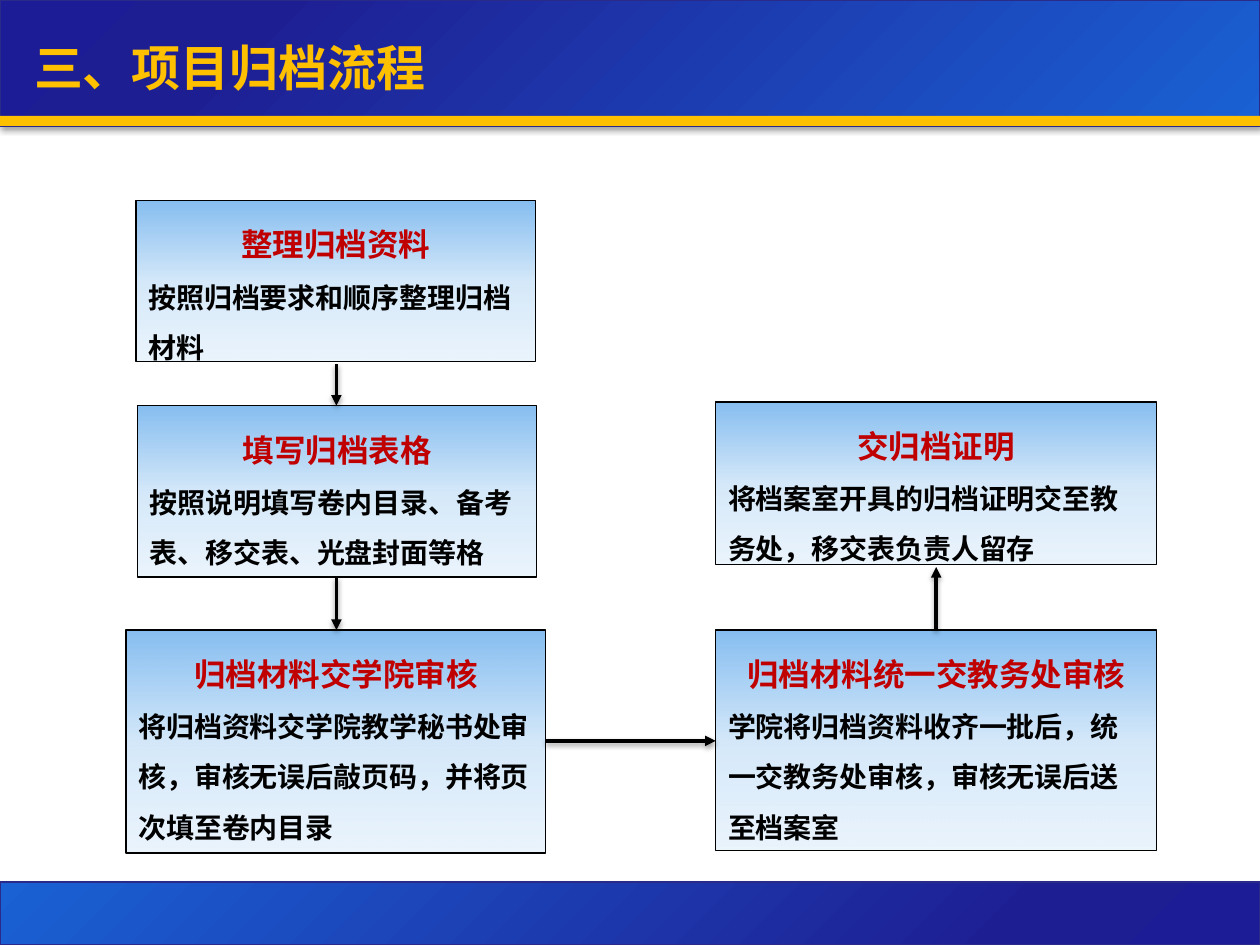
import pptx
import pptx.dml.color
import pptx.enum.shapes
import pptx.enum.text
import pptx.oxml
import pptx.oxml.ns
import pptx.util
from dataclasses import dataclass

Inches, Pt = pptx.util.Inches, pptx.util.Pt
RGB = pptx.dml.color.RGBColor.from_string
RECTANGLE = pptx.enum.shapes.MSO_SHAPE.RECTANGLE
ALIGN = pptx.enum.text.PP_ALIGN
NS = pptx.oxml.ns.nsdecls("a")


@dataclass(frozen=True)
class Theme:
    font: str = "Noto Sans CJK SC"
    gold: str = "FFC000"
    heading: str = "C00000"
    ink: str = "000000"
    band_line: str = "2A2A89"
    band_stops: tuple = ((0, "1A61D4", 100), (80, "1E1E93", 100), (100, "1C1C96", 100))
    step_stops: tuple = ((0, "50A1EA", 69), (50, "50A1EA", 24), (100, "50A1EA", 11))
    title_size: int = 28
    heading_size: int = 18
    body_size: int = 16


theme = Theme()


def fill_gradient(shape, stops, direction):
    """Fill a shape with (position, colour, opacity) stops along a direction element."""
    stop_xml = "".join(
        f'<a:gs pos="{pos * 1000}"><a:srgbClr val="{color}">'
        f'<a:alpha val="{opacity * 1000}"/></a:srgbClr></a:gs>'
        for pos, color, opacity in stops)
    shape.fill.background()
    no_fill = shape._element.spPr.find(pptx.oxml.ns.qn("a:noFill"))
    no_fill.getparent().replace(no_fill, pptx.oxml.parse_xml(
        f'<a:gradFill {NS} rotWithShape="1"><a:gsLst>{stop_xml}</a:gsLst>{direction}</a:gradFill>'))


def add_shadow(shape, distance, opacity):
    """Give a shape a soft shadow straight below it."""
    shape._element.spPr.append(pptx.oxml.parse_xml(
        f'<a:effectLst {NS}><a:outerShdw blurRad="{Pt(3.1)}" dist="{Pt(distance)}" '
        f'dir="5400000" rotWithShape="0"><a:srgbClr val="{theme.ink}">'
        f'<a:alpha val="{opacity * 1000}"/></a:srgbClr></a:outerShdw></a:effectLst>'))


deck = pptx.Presentation()
deck.slide_width, deck.slide_height = Inches(10), Inches(7.5)
slide = deck.slides.add_slide(deck.slide_layouts[5])
title = slide.shapes.title

# Header and footer bands
bands = [
    (0, 1, '<a:path path="circle"><a:fillToRect l="100000" t="100000"/></a:path>'),
    (7, 0.5, '<a:lin ang="2700000" scaled="0"/>'),
]
for top, height, direction in bands:
    band = slide.shapes.add_shape(RECTANGLE, 0, Inches(top), Inches(10), Inches(height))
    fill_gradient(band, theme.band_stops, direction)
    band.line.color.rgb = RGB(theme.band_line)
    band.line.width = Pt(0.75)
    add_shadow(band, 1.8, 35)

# Gold rule under the header
rule = slide.shapes.add_shape(RECTANGLE, 0, Inches(0.92), Inches(10), Inches(0.08))
rule.fill.solid()
rule.fill.fore_color.rgb = RGB(theme.gold)
rule.line.fill.background()
rule.shadow.inherit = False

# Title, brought in front of the header band
slide.shapes._spTree.append(title._element)
title.left, title.top = Inches(0.17), Inches(0.25)
title.width, title.height = Inches(4.75), Inches(0.75)
title.text_frame.text = "三、项目归档流程"
title.text_frame.vertical_anchor = pptx.enum.text.MSO_ANCHOR.TOP
heading = title.text_frame.paragraphs[0]
heading.alignment = ALIGN.LEFT
heading.font.name = theme.font
heading.font.size = Pt(theme.title_size)
heading.font.bold = True
heading.font.color.rgb = RGB(theme.gold)

# Process steps: left, top, width, height, heading, description
steps = [
    (1.08, 1.59, 3.17, 1.28, "整理归档资料", "按照归档要求和顺序整理归档材料"),
    (1.09, 3.22, 3.17, 1.36, "填写归档表格",
     "按照说明填写卷内目录、备考表、移交表、光盘封面等格"),
    (1, 5, 3.33, 1.77, "归档材料交学院审核",
     "将归档资料交学院教学秘书处审核，审核无误后敲页码，并将页次填至卷内目录"),
    (5.68, 5, 3.5, 1.75, "归档材料统一交教务处审核",
     "学院将归档资料收齐一批后，统一交教务处审核，审核无误后送至档案室"),
    (5.68, 3.19, 3.5, 1.29, "交归档证明",
     "将档案室开具的归档证明交至教务处，移交表负责人留存"),
]
for left, top, width, height, name, description in steps:
    step = slide.shapes.add_shape(
        RECTANGLE, Inches(left), Inches(top), Inches(width), Inches(height))
    fill_gradient(step, theme.step_stops, '<a:lin ang="5400000" scaled="0"/>')
    step.line.color.rgb = RGB(theme.ink)
    step.line.width = Pt(0.75)
    step.shadow.inherit = False
    frame = step.text_frame
    frame.word_wrap = True
    frame.vertical_anchor = pptx.enum.text.MSO_ANCHOR.TOP
    frame.text = f"{name}\n{description}"
    styles = [(ALIGN.CENTER, theme.heading_size, theme.heading),
              (ALIGN.LEFT, theme.body_size, theme.ink)]
    for paragraph, (alignment, size, color) in zip(frame.paragraphs, styles):
        paragraph.alignment = alignment
        paragraph.line_spacing = 1.5
        paragraph.font.name = theme.font
        paragraph.font.size = Pt(size)
        paragraph.font.bold = True
        paragraph.font.color.rgb = RGB(color)

# Arrows from step to step
arrows = [
    (2.67, 2.89, 2.67, 3.22),
    (2.67, 4.58, 2.67, 5),
    (4.33, 5.88, 5.68, 5.88),
    (7.43, 5, 7.43, 4.5),
]
for ends in arrows:
    arrow = slide.shapes.add_connector(
        pptx.enum.shapes.MSO_CONNECTOR.STRAIGHT, *map(Inches, ends))
    arrow.line.color.rgb = RGB(theme.ink)
    arrow.line.width = Pt(2)
    arrow.line._get_or_add_ln().append(
        pptx.oxml.parse_xml(f'<a:tailEnd {NS} type="triangle"/>'))
    add_shadow(arrow, 1.6, 38)

deck.save("out.pptx")
